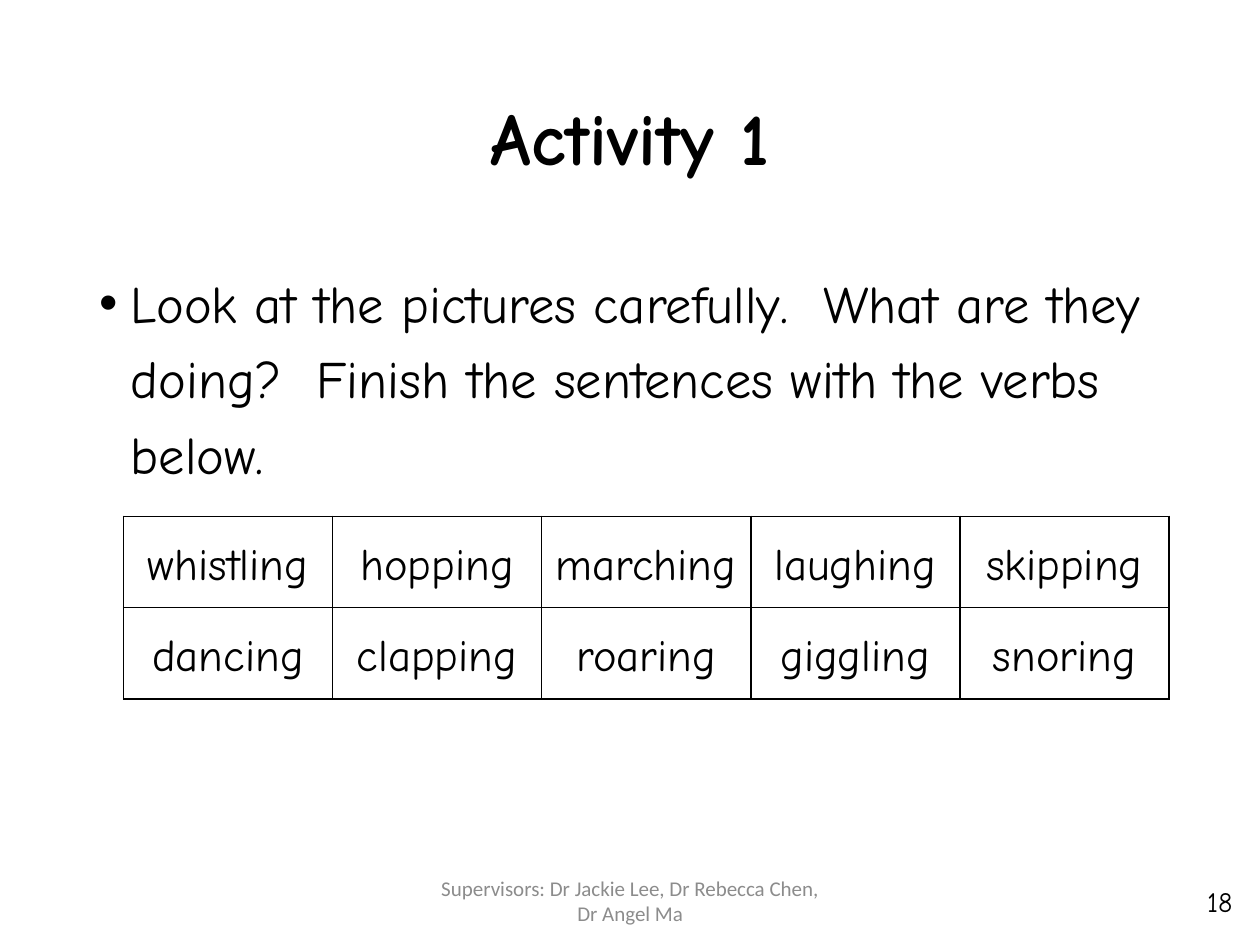
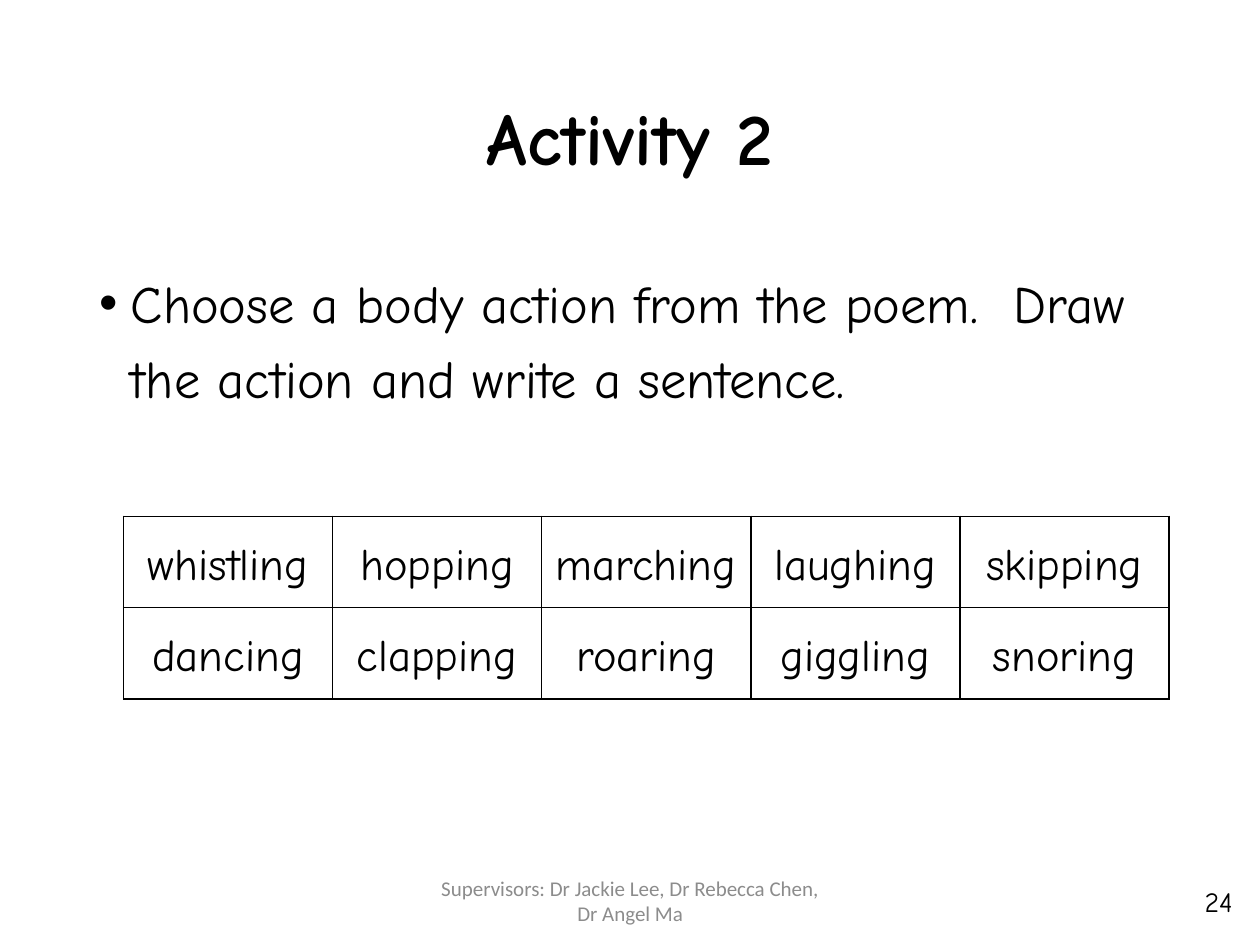
"""Build two activity slides that share a title style, a verb table and a footer."""
from dataclasses import dataclass

from lxml.etree import SubElement
from pptx import Presentation
from pptx.dml.color import RGBColor
from pptx.enum.text import MSO_ANCHOR, MSO_AUTO_SIZE, PP_ALIGN
from pptx.oxml.ns import qn
from pptx.util import Cm, Pt

HUES = {"ink": "000000", "grey": "8C8C8C"}
FONT = "Comic Neue"
VERBS = [
    ["whistling", "hopping", "marching", "laughing", "skipping"],
    ["dancing", "clapping", "roaring", "giggling", "snoring"],
]
CREDIT = "Supervisors: Dr Jackie Lee, Dr Rebecca Chen, Dr Angel Ma"


@dataclass(frozen=True)
class Box:
    left: float
    top: float
    width: float
    height: float

    def frame(self) -> tuple:
        return Cm(self.left), Cm(self.top), Cm(self.width), Cm(self.height)


@dataclass(frozen=True)
class Style:
    size: float
    align: PP_ALIGN = PP_ALIGN.CENTER
    anchor: MSO_ANCHOR = MSO_ANCHOR.MIDDLE
    font: str = FONT
    hue: str = "ink"
    bold: bool = False
    line: float = 1.0


@dataclass(frozen=True)
class Task:
    title: str
    prompt: str
    number: str


HEAD = Box(1.75, 1.02, 21.9, 3.68)
BODY = Box(1.75, 5.08, 21.9, 12.09)
GRID = Box(2.49, 10.41, 21.08, 3.68)
FOOT = Box(8.41, 17.65, 8.59, 1.02)
PAGE = Box(19.18, 17.65, 5.92, 1.02)

TITLE = Style(42, bold=True, line=0.9)
PROMPT = Style(30, PP_ALIGN.LEFT, MSO_ANCHOR.TOP, line=1.2)
WORD = Style(25.5, line=1.15)
NOTE = Style(12, font="Calibri", hue="grey")
COUNT = Style(16, PP_ALIGN.RIGHT)

TASKS = [
    Task("Activity 1", "Look at the pictures carefully.  What are they doing?  "
         "Finish the sentences with the verbs below.", "18"),
    Task("Activity 2", "Choose a body action from the poem.  "
         "Draw the action and write a sentence.", "24"),
]


def write(frame, text: str, style: Style) -> None:
    frame.text = text
    para = frame.paragraphs[0]
    para.alignment = style.align
    para.line_spacing = style.line
    font = para.runs[0].font
    font.name, font.size, font.bold = style.font, Pt(style.size), style.bold
    font.color.rgb = RGBColor.from_string(HUES[style.hue])


def fill_box(shape, text: str, style: Style) -> None:
    frame = shape.text_frame
    frame.word_wrap = True
    frame.auto_size = MSO_AUTO_SIZE.NONE
    frame.vertical_anchor = style.anchor
    write(frame, text, style)


def add_text(slide, box: Box, text: str, style: Style):
    shape = slide.shapes.add_textbox(*box.frame())
    fill_box(shape, text, style)
    return shape


def add_title(slide, text: str) -> None:
    shape = slide.shapes.title
    shape.left, shape.top, shape.width, shape.height = HEAD.frame()
    fill_box(shape, text, TITLE)


def add_prompt(slide, text: str) -> None:
    para = add_text(slide, BODY, text, PROMPT).text_frame.paragraphs[0]
    para.space_before = Pt(10)
    props = para._p.get_or_add_pPr()
    props.set("marL", str(Cm(0.64)))
    props.set("indent", str(-Cm(0.64)))
    SubElement(props, qn("a:buFont"), typeface="Arial")
    SubElement(props, qn("a:buChar"), char="•")


def rule_cell(cell) -> None:
    props = cell._tc.get_or_add_tcPr()
    for side in ("lnL", "lnR", "lnT", "lnB"):
        edge = SubElement(props, qn(f"a:{side}"), w=str(Pt(1)))
        paint = SubElement(edge, qn("a:solidFill"))
        SubElement(paint, qn("a:srgbClr"), val=HUES["ink"])


def add_grid(slide) -> None:
    rows, cols = len(VERBS), len(VERBS[0])
    table = slide.shapes.add_table(rows, cols, *GRID.frame()).table
    table.first_row = table.horz_banding = False
    for row, verbs in enumerate(VERBS):
        for col, verb in enumerate(verbs):
            cell = table.cell(row, col)
            cell.margin_left = cell.margin_right = Cm(0.18)
            cell.margin_top = cell.margin_bottom = 0
            cell.vertical_anchor = WORD.anchor
            write(cell.text_frame, verb, WORD)
            rule_cell(cell)
            cell.fill.background()


def add_task(deck, task: Task) -> None:
    slide = deck.slides.add_slide(deck.slide_layouts[5])
    add_title(slide, task.title)
    add_prompt(slide, task.prompt)
    add_text(slide, PAGE, task.number, COUNT)
    add_grid(slide)
    add_text(slide, FOOT, CREDIT, NOTE)


def main() -> None:
    deck = Presentation()
    deck.slide_width, deck.slide_height = Cm(25.4), Cm(19.05)
    for task in TASKS:
        add_task(deck, task)
    deck.save("out.pptx")


if __name__ == "__main__":
    main()
